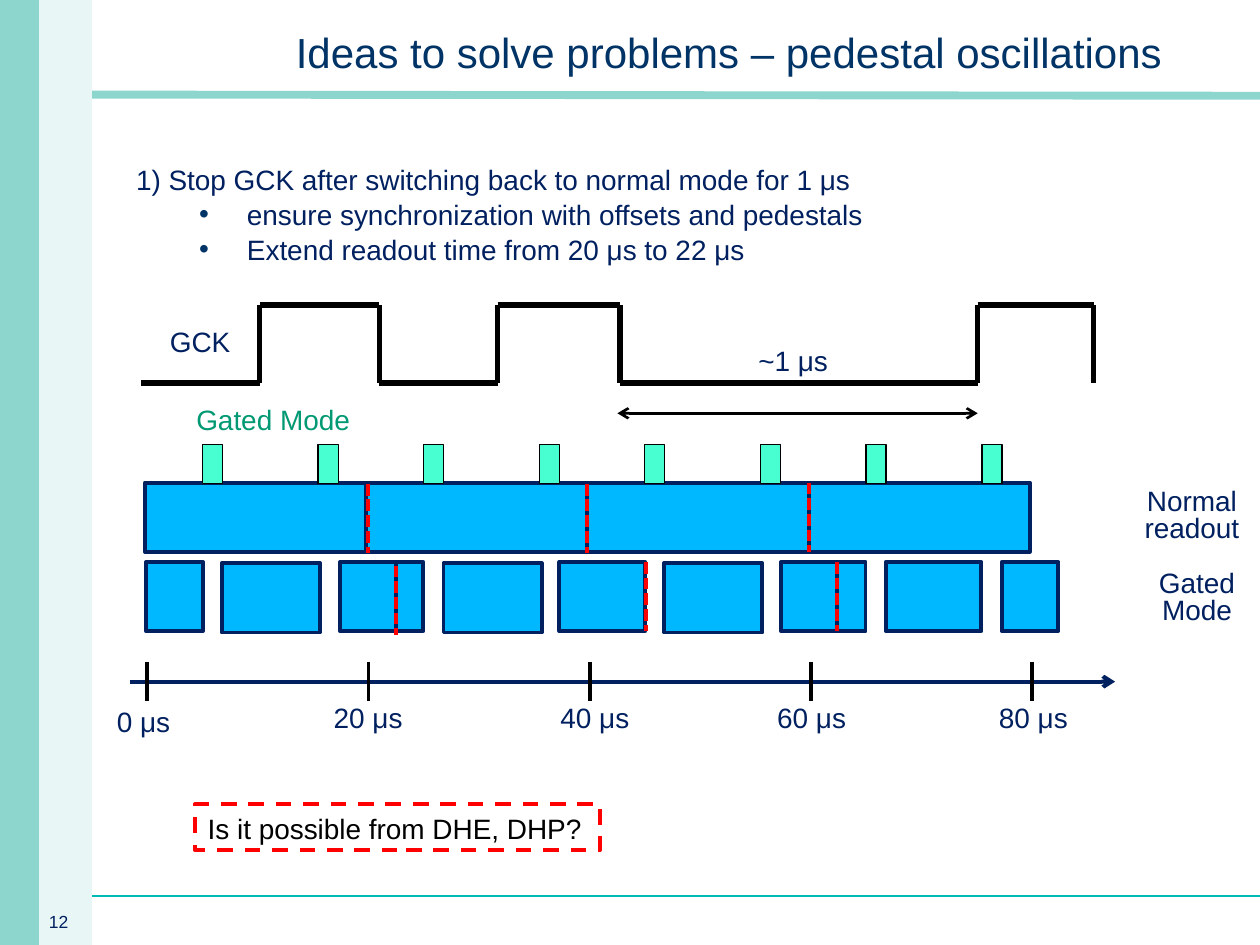
import dataclasses
import itertools
import typing

import lxml.etree
import pptx
import pptx.dml.color
import pptx.enum.dml
import pptx.enum.shapes
import pptx.enum.text
import pptx.oxml.ns
import pptx.slide
import pptx.util

COLUMNS, ROWS = 100, 75
WIDTH, HEIGHT = pptx.util.Inches(10), pptx.util.Inches(7.5)
ALIGN = pptx.enum.text.PP_ALIGN
ANCHOR = pptx.enum.text.MSO_ANCHOR
DASH = pptx.enum.dml.MSO_LINE


@dataclasses.dataclass(frozen=True)
class Theme:
    font: str = "Arial"
    navy: str = "002060"
    title: str = "003366"
    mint: str = "8DD6CE"
    pale: str = "E8F7F5"
    teal: str = "00BAB6"
    block: str = "00B8FF"
    pulse: str = "47FFD1"
    green: str = "009973"
    black: str = "000000"
    red: str = "FF0000"
    title_size: float = 24
    text_size: float = 16
    number_size: float = 10


THEME = Theme()


class Area(typing.NamedTuple):
    column: float
    row: float
    columns: float
    rows: float


class Stroke(typing.NamedTuple):
    color: str
    width: float
    dash: typing.Any = None
    head: bool = False
    tail: bool = False


class Label(typing.NamedTuple):
    area: Area
    text: str
    color: str = THEME.navy
    size: float = THEME.text_size
    align: typing.Any = ALIGN.LEFT
    spacing: float = 0.8
    wrap: bool = False


class Tick(typing.NamedTuple):
    label_column: float
    label_row: float
    label_columns: float


OUTLINE = Stroke(THEME.navy, 2.25)
CLOCK = Stroke(THEME.black, 3)
BREAK = Stroke(THEME.red, 2.25, DASH.SQUARE_DOT)

PERIOD = 17.56
FRAMES = [11.5 + PERIOD * index for index in range(4)]
PULSE_OFFSETS = (4.55, 13.75)
CLOCK_EDGES = (11.2, 20.6, 30.1, 39.5, 49.2, 77.6, 86.8)
CLOCK_LOW, CLOCK_HIGH = 30.4, 24.2

GATED_BLOCKS = (
    Area(11.6, 44.6, 4.5, 5.5), Area(17.6, 44.7, 7.8, 5.5),
    Area(27, 44.6, 4.5, 5.5), Area(31.4, 44.6, 2.2, 5.5),
    Area(35.2, 44.7, 7.8, 5.5), Area(44.4, 44.6, 6.8, 5.5),
    Area(52.7, 44.7, 7.8, 5.5), Area(62, 44.6, 4.5, 5.5),
    Area(66.4, 44.6, 2.3, 5.5), Area(70.3, 44.6, 7.6, 5.5),
    Area(79.5, 44.6, 4.5, 5.5),
)
BREAKS = ((29.2, 38.4), (46.6, 38.4), (64.2, 38.3), (31.4, 44.9), (51.3, 44.6), (66.4, 44.6))
TICKS = (Tick(8.3, 55.9, 6.3), Tick(25.5, 55.6, 7.6), Tick(43.5, 55.6, 7.6),
         Tick(60.7, 55.6, 7.6), Tick(78.3, 55.6, 7.6))
LABELS = (
    Label(Area(2.9, 72.1, 4.8, 2.4), "12", size=THEME.number_size),
    Label(Area(59.2, 27.3, 7.6, 3.2), "~1 μs"),
    Label(Area(12.5, 25.8, 6.9, 3.2), "GCK"),
    Label(Area(14.6, 32, 14.4, 3.2), "Gated Mode", THEME.green),
    Label(Area(88.3, 38.4, 12.6, 5.3), "Normal readout", align=ALIGN.CENTER, wrap=True),
    Label(Area(88.7, 44.9, 12.6, 5.3), "Gated Mode", align=ALIGN.CENTER, wrap=True),
)
LIST = (
    (0, "1) Stop GCK after switching back to normal mode for 1 μs"),
    (1, "ensure synchronization with offsets and pedestals"),
    (1, "Extend readout time from 20 μs to 22 μs"),
)


def across(columns: float) -> int:
    return round(WIDTH * columns / COLUMNS)


def down(rows: float) -> int:
    return round(HEIGHT * rows / ROWS)


def place(area: Area) -> tuple[int, int, int, int]:
    return across(area.column), down(area.row), across(area.columns), down(area.rows)


def rgb(color: str) -> pptx.dml.color.RGBColor:
    return pptx.dml.color.RGBColor.from_string(color)


def apply(target: typing.Any, formats: dict[str, typing.Any]) -> None:
    for name, value in formats.items():
        setattr(target, name, value)


def add_element(parent: typing.Any, tag: str, **attributes: str) -> typing.Any:
    return lxml.etree.SubElement(parent, pptx.oxml.ns.qn(tag), attributes)


def draw_stroke(line: typing.Any, stroke: Stroke) -> None:
    line.color.rgb = rgb(stroke.color)
    apply(line, {"width": pptx.util.Pt(stroke.width), "dash_style": stroke.dash})


def write_span(para: typing.Any, text: str, color: str, size: float) -> None:
    span = para.add_run()
    span.text = text
    apply(span.font, {"name": THEME.font, "size": pptx.util.Pt(size)})
    span.font.color.rgb = rgb(color)


def add_block(page: pptx.slide.Slide, area: Area, fill: str, outline: Stroke | None = None) -> None:
    block = page.shapes.add_shape(pptx.enum.shapes.MSO_SHAPE.RECTANGLE, *place(area))
    block.shadow.inherit = False
    block.fill.solid()
    block.fill.fore_color.rgb = rgb(fill)
    if outline:
        draw_stroke(block.line, outline)
    else:
        block.line.fill.background()


def add_line(page: pptx.slide.Slide, start: tuple[float, float], end: tuple[float, float],
             stroke: Stroke) -> None:
    line = page.shapes.add_connector(
        pptx.enum.shapes.MSO_CONNECTOR.STRAIGHT,
        across(start[0]), down(start[1]), across(end[0]), down(end[1]))
    draw_stroke(line.line, stroke)
    for tag, wanted in (("a:headEnd", stroke.head), ("a:tailEnd", stroke.tail)):
        if wanted:
            add_element(line.line._get_or_add_ln(), tag, type="arrow")
    add_element(line._element.spPr, "a:effectLst")


def add_label(page: pptx.slide.Slide, label: Label) -> typing.Any:
    box = page.shapes.add_textbox(*place(label.area))
    box.text_frame.word_wrap = label.wrap
    para = box.text_frame.paragraphs[0]
    apply(para, {"alignment": label.align, "line_spacing": label.spacing})
    write_span(para, label.text, label.color, label.size)
    return box


def move_placeholder(box: typing.Any, area: Area, anchor: typing.Any) -> typing.Any:
    apply(box, dict(zip(("left", "top", "width", "height"), place(area))))
    apply(box.text_frame, {"word_wrap": True, "vertical_anchor": anchor,
                           "auto_size": pptx.enum.text.MSO_AUTO_SIZE.NONE})
    return box.text_frame


def write_title(page: pptx.slide.Slide) -> None:
    frame = move_placeholder(page.shapes.title, Area(17.7, 1.3, 80.3, 5.2), ANCHOR.MIDDLE)
    para = frame.paragraphs[0]
    apply(para, {"alignment": ALIGN.CENTER, "line_spacing": 1.1})
    write_span(para, "Ideas to solve problems – pedestal oscillations", THEME.title, THEME.title_size)


def write_list(page: pptx.slide.Slide) -> None:
    frame = move_placeholder(page.placeholders[1], Area(9.8, 12.3, 62.2, 9.1), ANCHOR.TOP)
    for index, (level, text) in enumerate(LIST):
        para = frame.add_paragraph() if index else frame.paragraphs[0]
        properties = para._p.get_or_add_pPr()
        margin, indent = (0.88, -0.38) if level else (0, 0)
        properties.set("marL", str(pptx.util.Inches(margin)))
        properties.set("indent", str(pptx.util.Inches(indent)))
        if level:
            add_element(add_element(properties, "a:buClr"), "a:srgbClr", val=THEME.title)
            add_element(properties, "a:buFont", typeface=THEME.font)
            add_element(properties, "a:buChar", char="•")
        else:
            add_element(properties, "a:buNone")
        apply(para, {"level": level, "line_spacing": 1.04, "space_before": pptx.util.Pt(0)})
        write_span(para, text, THEME.navy, THEME.text_size)


def draw_frame(page: pptx.slide.Slide) -> None:
    add_line(page, (0, 7.5), (100, 7.6), Stroke(THEME.mint, 4.5))
    add_line(page, (7.3, 71.1), (100, 71.1), Stroke(THEME.teal, 1.5))
    add_block(page, Area(3, 0, 4.3, 75), THEME.pale)
    add_block(page, Area(0, 0, 3.1, 75), THEME.mint)


def draw_clock(page: pptx.slide.Slide) -> None:
    levels = itertools.cycle((CLOCK_LOW, CLOCK_HIGH))
    for (start, end), level in zip(itertools.pairwise(CLOCK_EDGES), levels):
        add_line(page, (start, level), (end, level), CLOCK)
        add_line(page, (end, CLOCK_HIGH), (end, CLOCK_LOW), CLOCK)
    add_line(page, (49, 32.8), (77.6, 32.8), Stroke(THEME.black, 1.5, head=True, tail=True))


def draw_readout(page: pptx.slide.Slide) -> None:
    for frame in FRAMES:
        add_block(page, Area(frame, 38.3, PERIOD, 5.5), THEME.block, OUTLINE)
        for offset in PULSE_OFFSETS:
            add_block(page, Area(frame + offset, 35.3, 1.6, 3.1), THEME.pulse, Stroke(THEME.black, 0.75))
    for area in GATED_BLOCKS:
        add_block(page, area, THEME.block, OUTLINE)
    for column, row in BREAKS:
        add_line(page, (column, row), (column, row + 5.5), BREAK)


def draw_axis(page: pptx.slide.Slide) -> None:
    add_line(page, (10.3, 54.1), (88.5, 54.1), Stroke(THEME.navy, 2.25, tail=True))
    for index, tick in enumerate(TICKS):
        column = 11.7 + 17.55 * index
        add_line(page, (column, 52.5), (column, 55.6), Stroke(THEME.black, 2.25))
        area = Area(tick.label_column, tick.label_row, tick.label_columns, 3.2)
        add_label(page, Label(area, f"{20 * index} μs"))


def main() -> None:
    deck = pptx.Presentation()
    apply(deck, {"slide_width": WIDTH, "slide_height": HEIGHT})
    page = deck.slides.add_slide(deck.slide_layouts[1])
    for draw in (draw_frame, write_title, write_list, draw_clock, draw_readout, draw_axis):
        draw(page)
    for label in LABELS:
        add_label(page, label)
    question = Label(Area(15.5, 63.8, 32.1, 3.7), "Is it possible from DHE, DHP?", THEME.black, spacing=1.04)
    draw_stroke(add_label(page, question).line, Stroke(THEME.red, 2.25, DASH.DASH))
    deck.save("out.pptx")


if __name__ == "__main__":
    main()
